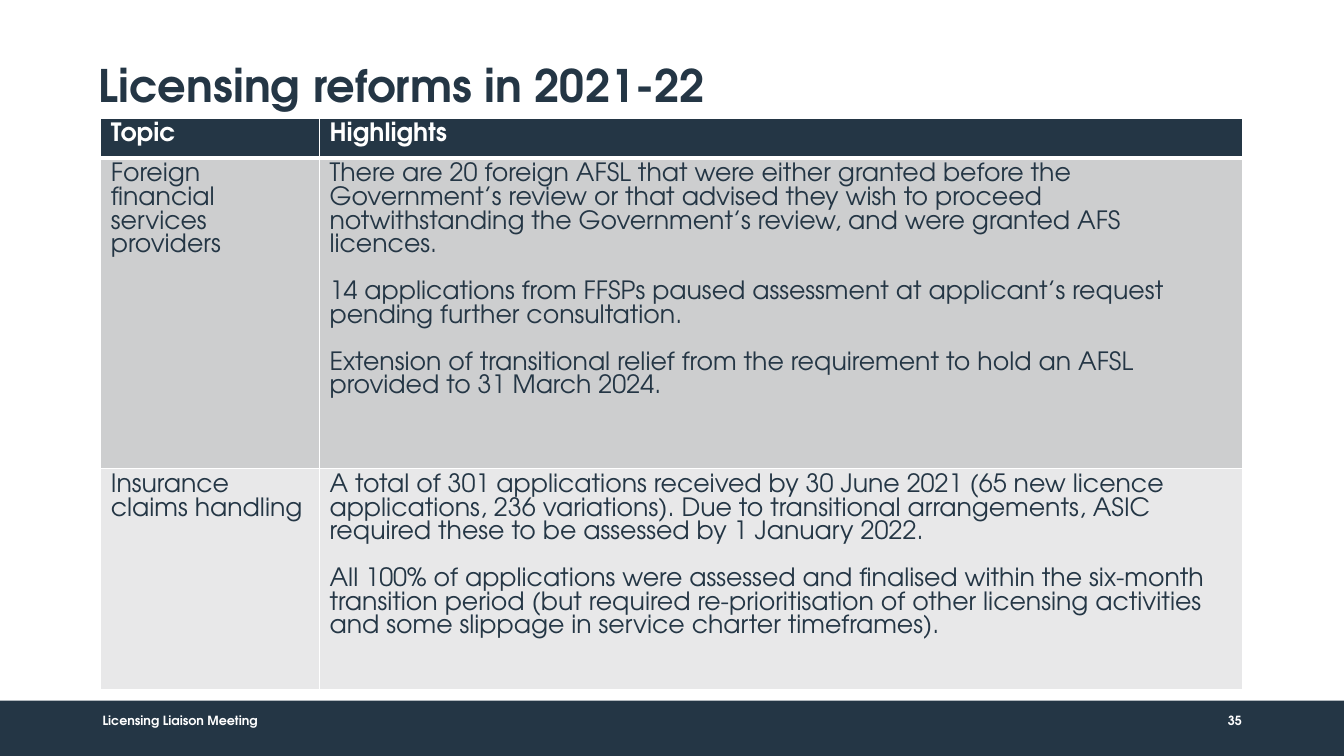
from dataclasses import dataclass
from itertools import product

from lxml.etree import SubElement
from pptx import Presentation
from pptx.dml.color import RGBColor
from pptx.enum.shapes import MSO_SHAPE as Shape
from pptx.enum.text import MSO_ANCHOR as Anchor, PP_ALIGN as Align
from pptx.oxml.ns import qn
from pptx.slide import Slide
from pptx.table import _Cell as Cell
from pptx.text.text import TextFrame
from pptx.util import Pt

FONT = "TeX Gyre Adventor"
NAVY = RGBColor(0x24, 0x36, 0x45)
WHITE = RGBColor(0xFF, 0xFF, 0xFF)
GREY = RGBColor(0xCD, 0xCE, 0xCF)
PALE = RGBColor(0xE8, 0xE8, 0xE9)

WIDTH, HEIGHT = 960, 540
BAND_TOP, BAND_HIGH = 500.4, 39.6
COLS = (156.25, 659.5)


@dataclass
class Row:
    high: float
    fill: RGBColor
    topic: str
    notes: list[str]
    color: RGBColor = NAVY
    bold: bool = False
    top: float = 1
    base: float = 1


@dataclass
class Label:
    left: float
    wide: float
    text: str
    align: Align
    inset: float


ROWS = [
    Row(28.8, NAVY, "Topic", ["Highlights"], WHITE, True, base=3),
    Row(221.8, GREY, "Foreign financial services providers", [
        "There are 20 foreign AFSL that were either granted before the Government’s review "
        "or that advised they wish to proceed notwithstanding the Government’s review, "
        "and were granted AFS licences.",
        "14 applications from FFSPs paused assessment at applicant’s request "
        "pending further consultation.",
        "Extension of transitional relief from the requirement to hold an AFSL "
        "provided to 31 March 2024.",
    ], top=3),
    Row(157.7, PALE, "Insurance claims handling", [
        "A total of 301 applications received by 30 June 2021 (65 new licence applications, "
        "236 variations). Due to transitional arrangements, ASIC required these to be "
        "assessed by 1 January 2022.",
        "All 100% of applications were assessed and finalised within the six-month "
        "transition period (but required re-prioritisation of other licensing activities "
        "and some slippage in service charter timeframes).",
    ]),
]

LABELS = [
    Label(66.25, 575.25, "Licensing Liaison Meeting", Align.LEFT, 7.2),
    Label(865.5, 28.8, "35", Align.RIGHT, 0),
]


def write(frame: TextFrame, *texts: str, size: float, color: RGBColor, bold: bool = False,
          align: Align = Align.LEFT, anchor: Anchor = Anchor.TOP,
          gap: float = 0, pitch: float | None = None) -> None:
    """Fill a frame with one paragraph per text, all in one format."""
    frame.word_wrap = True
    frame.vertical_anchor = anchor
    for i, text in enumerate(texts):
        para = frame.paragraphs[0] if i == 0 else frame.add_paragraph()
        para.alignment = align
        if pitch:
            para.line_spacing = pitch
        if i and gap:
            para.space_before = Pt(gap)
        run = para.add_run()
        run.text = text
        font = run.font
        font.name, font.size, font.bold = FONT, Pt(size), bold
        font.color.rgb = color


def edge(cell: Cell, row: Row) -> None:
    """Draw the four white borders of a cell."""
    props = cell._tc.get_or_add_tcPr()
    for side, wide in (("L", 1), ("R", 1), ("T", row.top), ("B", row.base)):
        line = SubElement(props, qn(f"a:ln{side}"), w=str(Pt(wide)))
        fill = SubElement(line, qn("a:solidFill"))
        SubElement(fill, qn("a:srgbClr"), val=str(WHITE))


def add_title(slide: Slide) -> None:
    title = slide.shapes.title
    title.left, title.top, title.width, title.height = Pt(63.4), Pt(10.8), Pt(828), Pt(104.4)
    write(title.text_frame, "Licensing reforms in 2021-22", size=32, color=NAVY,
          bold=True, anchor=Anchor.MIDDLE, pitch=0.9)


def add_footer(slide: Slide) -> None:
    band = slide.shapes.add_shape(Shape.RECTANGLE, 0, Pt(BAND_TOP), Pt(WIDTH), Pt(BAND_HIGH))
    band.shadow.inherit = False
    band.fill.solid()
    band.fill.fore_color.rgb = NAVY
    band.line.fill.background()
    for label in LABELS:
        box = slide.shapes.add_textbox(Pt(label.left), Pt(BAND_TOP), Pt(label.wide), Pt(28.8))
        box.text_frame.margin_left = Pt(label.inset)
        write(box.text_frame, label.text, size=9, color=WHITE, bold=True,
              align=label.align, anchor=Anchor.MIDDLE)


def add_grid(slide: Slide) -> None:
    high = sum(row.high for row in ROWS)
    table = slide.shapes.add_table(len(ROWS), len(COLS), Pt(72), Pt(84.25),
                                   Pt(sum(COLS)), Pt(high)).table
    for col, wide in zip(table.columns, COLS):
        col.width = Pt(wide)
    for line, row in zip(table.rows, ROWS):
        line.height = Pt(row.high)
    for (r, row), c in product(enumerate(ROWS), range(len(COLS))):
        cell = table.cell(r, c)
        edge(cell, row)
        cell.fill.solid()
        cell.fill.fore_color.rgb = row.fill
        texts = row.notes if c else [row.topic]
        write(cell.text_frame, *texts, size=18, color=row.color, bold=row.bold, gap=16.8)


def main() -> None:
    deck = Presentation()
    deck.slide_width, deck.slide_height = Pt(WIDTH), Pt(HEIGHT)
    slide = deck.slides.add_slide(deck.slide_layouts[5])
    add_title(slide)
    add_footer(slide)
    add_grid(slide)
    deck.save("out.pptx")


if __name__ == "__main__":
    main()
